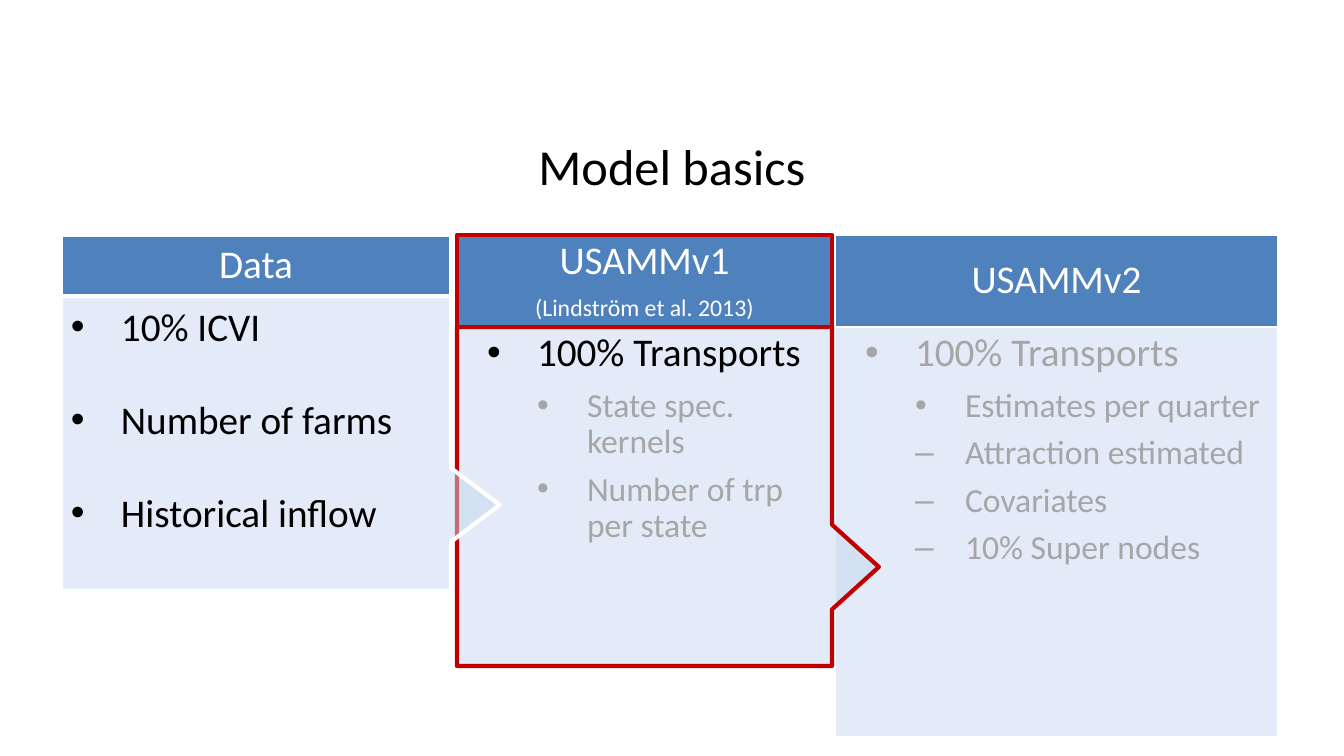
from lxml import etree
from pptx import Presentation
from pptx.dml.color import RGBColor
from pptx.enum.shapes import MSO_SHAPE
from pptx.enum.text import MSO_ANCHOR, PP_ALIGN
from pptx.oxml.ns import qn
from pptx.util import Emu, Pt

RECTANGLE = MSO_SHAPE.RECTANGLE
CALLOUT = MSO_SHAPE.RECTANGULAR_CALLOUT
TOP, MIDDLE = MSO_ANCHOR.TOP, MSO_ANCHOR.MIDDLE
LEFT, CENTER = PP_ALIGN.LEFT, PP_ALIGN.CENTER

FONT = "Calibri"
BLACK, WHITE, GREY = "000000", "FFFFFF", "A6A6A6"
BLUE, PALE_BLUE, RED = "4F81BD", "C6D9F1", "C00000"
TAIL = (0.625, 0.208)
INDENT = 50
COLUMN_TOP = 235

# Items are (level, bullet, text, size, colour).
COLUMNS = [
    dict(left=835, width=443, header=92, body=410, shape=RECTANGLE,
         line=(WHITE, 2), inset=30, line_spacing=0.9, gap=None,
         titles=[("USAMMv2", 28)],
         items=[(0, "•", "100% Transports", 28, GREY),
                (1, "•", "Estimates per quarter", 24, GREY),
                (1, "‒", "Attraction estimated", 24, GREY),
                (1, "‒", "Covariates", 24, GREY),
                (1, "‒", "10% Super nodes", 24, GREY)]),
    dict(left=457, width=375, header=92, body=339, shape=CALLOUT,
         line=(RED, 3), inset=30, line_spacing=0.9, gap=None,
         titles=[("USAMMv1", 28), ("(Lindström et al. 2013)", 17)],
         items=[(0, "•", "100% Transports", 28, BLACK),
                (1, "•", "State spec. kernels", 24, GREY),
                (1, "•", "Number of trp per state", 24, GREY)]),
    dict(left=61, width=390, header=61, body=295, shape=CALLOUT,
         line=(WHITE, 3), inset=10, line_spacing=1.0, gap=33,
         titles=[("Data", 28)],
         items=[(0, "•", "10% ICVI", 28, BLACK),
                (0, "•", "Number of farms", 28, BLACK),
                (0, "•", "Historical inflow", 28, BLACK)]),
]


def px(length):
    return Emu(round(length * 914400 / 100.8))


def color(hex_string):
    return RGBColor.from_string(hex_string)


def set_frame(shape, anchor, left=6, other=6):
    frame = shape.text_frame
    frame.word_wrap = True
    frame.vertical_anchor = anchor
    frame.margin_left = px(left)
    frame.margin_top = frame.margin_right = frame.margin_bottom = px(other)
    return frame


def next_paragraph(frame, index):
    return frame.paragraphs[0] if index == 0 else frame.add_paragraph()


def write(para, text, size, text_color, align):
    para.text = text
    para.alignment = align
    font = para.runs[0].font
    font.name, font.size = FONT, Pt(size)
    font.color.rgb = color(text_color)


def set_bullet(para, level, character):
    properties = para._p.get_or_add_pPr()
    properties.set("marL", str(px(INDENT * (level + 1))))
    properties.set("indent", str(-px(INDENT)))
    etree.SubElement(properties, qn("a:buFont")).set("typeface", "Arial")
    etree.SubElement(properties, qn("a:buChar")).set("char", character)


def add_panel(page, kind, box, fill, line):
    panel = page.shapes.add_shape(kind, *map(px, box))
    panel.shadow.inherit = False
    panel.fill.solid()
    panel.fill.fore_color.rgb = color(fill)
    panel.line.color.rgb = color(line[0])
    panel.line.width = Pt(line[1])
    return panel


def make_half_transparent(shape):
    fill = shape._element.spPr.find(qn("a:solidFill"))
    etree.SubElement(fill[0], qn("a:alpha")).set("val", "50000")


def add_title(page, box):
    title = page.shapes.add_textbox(*map(px, box))
    frame = set_frame(title, MIDDLE)
    write(frame.paragraphs[0], "Model basics", 36, BLACK, CENTER)


def add_body(page, box, column):
    body = add_panel(page, column["shape"], box, PALE_BLUE, column["line"])
    make_half_transparent(body)
    if column["shape"] == CALLOUT:
        for index, value in enumerate(TAIL):
            body.adjustments[index] = value
    frame = set_frame(body, TOP, column["inset"])
    for index, (level, bullet, text, size, shade) in enumerate(column["items"]):
        para = next_paragraph(frame, index)
        para.level = level
        set_bullet(para, level, bullet)
        write(para, text, size, shade, LEFT)
        para.line_spacing = column["line_spacing"]
        para.space_after = Pt(column["gap"] or size / 3)


def add_header(page, box, column):
    header = add_panel(page, RECTANGLE, box, BLUE, column["line"])
    frame = set_frame(header, MIDDLE)
    for index, (text, size) in enumerate(column["titles"]):
        para = next_paragraph(frame, index)
        write(para, text, size, WHITE, CENTER)
        para.line_spacing = 0.9
        para.space_after = Pt(size / 3)


def add_column(page, column):
    left, width, header = column["left"], column["width"], column["header"]
    add_body(page, (left, COLUMN_TOP + header, width, column["body"]), column)
    add_header(page, (left, COLUMN_TOP, width, header), column)


def main():
    deck = Presentation()
    deck.slide_width, deck.slide_height = px(1344), px(756)
    page = deck.slides.add_slide(deck.slide_layouts[6])
    add_title(page, (67, 102, 1210, 126))
    for column in COLUMNS:
        add_column(page, column)
    deck.save("out.pptx")


if __name__ == "__main__":
    main()
